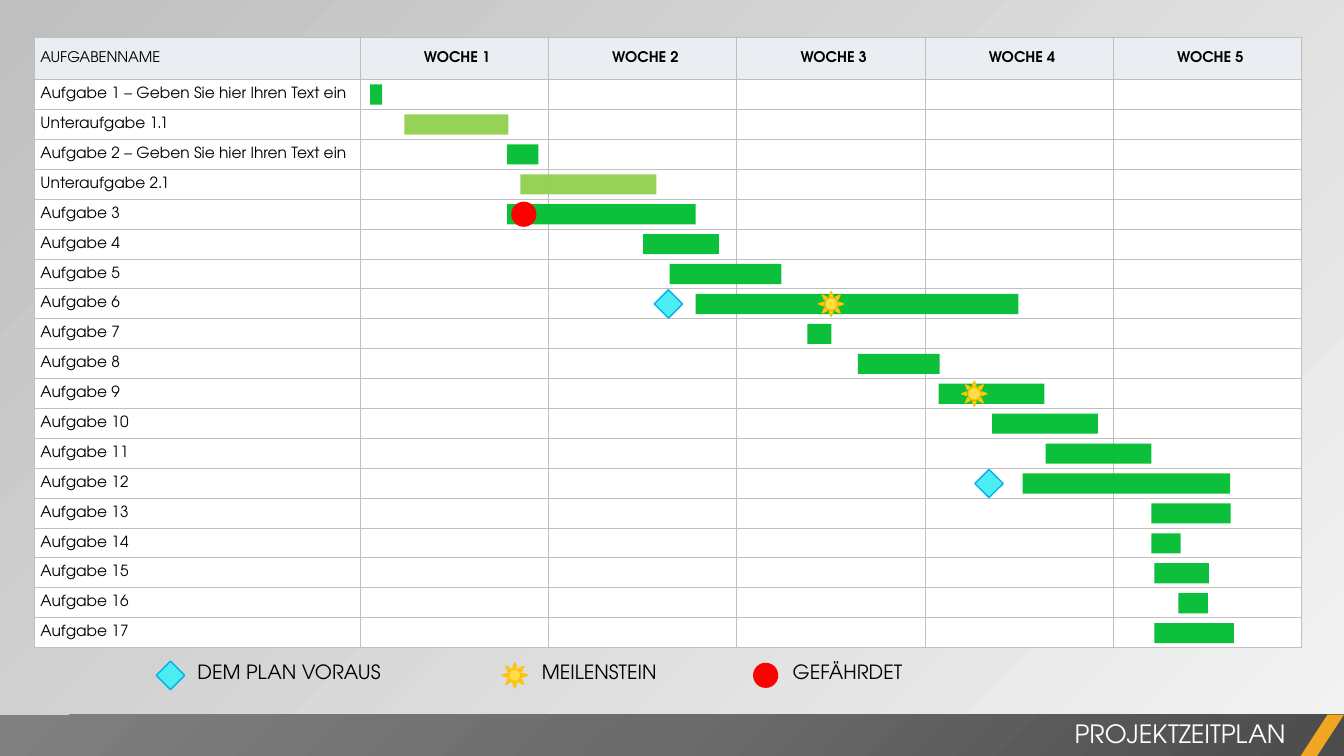
from dataclasses import dataclass

from lxml.etree import SubElement
from pptx import Presentation
from pptx.dml.color import RGBColor
from pptx.enum.shapes import MSO_SHAPE as Shape
from pptx.enum.text import MSO_ANCHOR as Anchor, PP_ALIGN as Align
from pptx.oxml import parse_xml
from pptx.oxml.ns import nsdecls, qn
from pptx.util import Inches, Pt

TITLE = "PROJEKTZEITPLAN"
HEADINGS = ["AUFGABENNAME"] + [f"WOCHE {week}" for week in range(1, 6)]

# name, first day, length in days
TASKS = [
    ("Aufgabe 1 – Geben Sie hier Ihren Text ein", 0.27, 0.32),
    ("Unteraufgabe 1.1", 1.18, 2.76),
    ("Aufgabe 2 – Geben Sie hier Ihren Text ein", 3.91, 0.83),
    ("Unteraufgabe 2.1", 4.26, 3.61),
    ("Aufgabe 3", 3.91, 5),
    ("Aufgabe 4", 7.52, 2.01),
    ("Aufgabe 5", 8.22, 2.97),
    ("Aufgabe 6", 8.91, 8.57),
    ("Aufgabe 7", 11.88, 0.64),
    ("Aufgabe 8", 13.22, 2.17),
    ("Aufgabe 9", 15.36, 2.81),
    ("Aufgabe 10", 16.78, 2.81),
    ("Aufgabe 11", 18.2, 2.81),
    ("Aufgabe 12", 17.59, 5.51),
    ("Aufgabe 13", 21.01, 2.11),
    ("Aufgabe 14", 21.01, 0.78),
    ("Aufgabe 15", 21.09, 1.45),
    ("Aufgabe 16", 21.73, 0.78),
    ("Aufgabe 17", 21.09, 2.11),
]
EVENTS = [
    ("risk", "Aufgabe 3", 4.35),
    ("milestone", "Aufgabe 6", 12.51),
    ("milestone", "Aufgabe 9", 16.31),
    ("ahead", "Aufgabe 6", 8.19),
    ("ahead", "Aufgabe 12", 16.7),
]
LEGEND = [
    ("ahead", "DEM PLAN VORAUS", -5.03, 2.04),
    ("milestone", "MEILENSTEIN", 4.11, 1.35),
    ("risk", "GEFÄHRDET", 10.77, 1.31),
]
MARKERS = {
    "ahead": (Shape.RECTANGLE, 0.2, "4CEDF0", "00B0F0"),
    "milestone": (Shape.SUN, 0.25, "FFDE4C", "FFC000"),
    "risk": (Shape.OVAL, 0.25, "FF0000", None),
}


@dataclass(frozen=True)
class Theme:
    font: str = "TeX Gyre Adventor"
    ink: str = "000000"
    paper: str = "FFFFFF"
    header: str = "EAEEF3"
    grid: str = "BFBFBF"
    task: str = "00BD32"
    subtask: str = "92D050"
    accent: str = "F0A622"
    backdrop: tuple = ((0, "F2F2F2", 40), (100, "BFBFBF", 100))
    footer: tuple = ((0, "4C4C4C", 100), (50, "6B6B6B", 100), (100, "808080", 100))
    heading_size: float = 10.5
    task_size: float = 11
    legend_size: float = 14
    title_size: float = 18


theme = Theme()
WIDTH, HEIGHT = 13.33, 7.5
LEFT, TOP, RIGHT, BOTTOM = 0.34, 0.37, 12.91, 6.43
NAME_WIDTH, HEADER_HEIGHT, BAR_HEIGHT = 3.23, 0.42, 0.2
WEEK = (RIGHT - LEFT - NAME_WIDTH) / (len(HEADINGS) - 1)
DAY = WEEK / 5
ROW = (BOTTOM - TOP - HEADER_HEIGHT) / len(TASKS)
FOOTER_TOP, LEGEND_MIDDLE = 7.09, 6.7

deck = Presentation()
deck.slide_width, deck.slide_height = Inches(WIDTH), Inches(HEIGHT)
slide = deck.slides.add_slide(deck.slide_layouts[6])


def day_x(day):
    return LEFT + NAME_WIDTH + day * DAY


def row_middle(row):
    return TOP + HEADER_HEIGHT + (row + 0.5) * ROW


def write(frame, text, size, color=theme.ink, bold=False, align=Align.LEFT):
    paragraph = frame.paragraphs[0]
    paragraph.alignment = align
    run = paragraph.add_run()
    run.text = text
    run.font.name, run.font.size, run.font.bold = theme.font, Pt(size), bold
    run.font.color.rgb = RGBColor.from_string(color)


def label(text, x, y, width, height, wrap=False, **style):
    frame = slide.shapes.add_textbox(*map(Inches, (x, y, width, height))).text_frame
    frame.word_wrap = wrap
    write(frame, text, **style)


def draw(kind, x, y, width, height, fill, line=None, alpha=100):
    shape = slide.shapes.add_shape(kind, *map(Inches, (x, y, width, height)))
    shape.shadow.inherit = False
    shape.fill.solid()
    shape.fill.fore_color.rgb = RGBColor.from_string(fill)
    if alpha < 100:
        tint = shape.fill._xPr.find(qn("a:solidFill"))[0]
        SubElement(tint, qn("a:alpha"), val=str(alpha * 1000))
    if line:
        shape.line.color.rgb = RGBColor.from_string(line)
        shape.line.width = Pt(1)
    else:
        shape.line.fill.background()
    return shape


def mark(event, day, middle):
    kind, size, fill, line = MARKERS[event]
    draw(kind, day_x(day) - size / 2, middle - size / 2, size, size, fill, line).rotation = 45


def shade(fill, stops, direction):
    fill.solid()
    solid = fill._xPr.find(qn("a:solidFill"))
    colors = "".join(
        f'<a:gs pos="{at * 1000}"><a:srgbClr val="{color}"><a:alpha val="{alpha * 1000}"/></a:srgbClr></a:gs>'
        for at, color, alpha in stops)
    solid.getparent().replace(solid, parse_xml(
        f'<a:gradFill {nsdecls("a")} rotWithShape="1"><a:gsLst>{colors}</a:gsLst>{direction}</a:gradFill>'))


def format_cell(cell, fill):
    cell.margin_left = Inches(0.06)
    cell.margin_right = cell.margin_top = cell.margin_bottom = 0
    cell.vertical_anchor = Anchor.MIDDLE
    cell.fill.solid()
    cell.fill.fore_color.rgb = RGBColor.from_string(fill)
    properties = cell._tc.get_or_add_tcPr()
    for place, side in enumerate("LRTB"):
        properties.insert(place, parse_xml(
            f'<a:ln{side} {nsdecls("a")} w="{Pt(0.5)}"><a:solidFill>'
            f'<a:srgbClr val="{theme.grid}"/></a:solidFill></a:ln{side}>'))


def build_table():
    table = slide.shapes.add_table(
        len(TASKS) + 1, len(HEADINGS),
        *map(Inches, (LEFT, TOP, RIGHT - LEFT, BOTTOM - TOP))).table
    table.first_row = table.horz_banding = False
    for index, column in enumerate(table.columns):
        column.width = Inches(WEEK if index else NAME_WIDTH)
    for index, row in enumerate(table.rows):
        row.height = Inches(ROW if index else HEADER_HEIGHT)
        for cell in row.cells:
            format_cell(cell, theme.paper if index else theme.header)
    for column, heading in enumerate(HEADINGS):
        write(table.cell(0, column).text_frame, heading, theme.heading_size,
              bold=column > 0, align=Align.CENTER if column else Align.LEFT)
    for row, (name, _, _) in enumerate(TASKS, 1):
        write(table.cell(row, 0).text_frame, name, theme.task_size)
        for column in range(1, len(HEADINGS)):
            paragraph = table.cell(row, column).text_frame.paragraphs[0]
            SubElement(paragraph._p, qn("a:endParaRPr"), sz=str(theme.task_size * 100))


shade(slide.background.fill, theme.backdrop, '<a:lin ang="13500000" scaled="0"/>')
build_table()

for row, (name, start, days) in enumerate(TASKS):
    color = theme.subtask if name.startswith("Unter") else theme.task
    draw(Shape.RECTANGLE, day_x(start), row_middle(row) - BAR_HEIGHT / 2,
         days * DAY, BAR_HEIGHT, color, alpha=95)

for event, meaning, day, width in LEGEND:
    mark(event, day, LEGEND_MIDDLE)
    label(meaning, day_x(day) + 0.17, LEGEND_MIDDLE - 0.2, width, 0.34, size=theme.legend_size)

task_names = [name for name, _, _ in TASKS]
for event, name, day in EVENTS:
    mark(event, day, row_middle(task_names.index(name)))

footer = draw(Shape.RECTANGLE, 0, FOOTER_TOP, WIDTH, HEIGHT - FOOTER_TOP, theme.ink)
shade(footer.fill, theme.footer,
      '<a:path path="circle"><a:fillToRect l="100000" t="100000"/></a:path>')
stripe = draw(Shape.PARALLELOGRAM, WIDTH - 0.43, FOOTER_TOP, 0.43, HEIGHT - FOOTER_TOP, theme.accent)
stripe.adjustments[0] = 0.65
label(TITLE, 5.25, FOOTER_TOP - 0.01, 7.6, 0.4, wrap=True,
      size=theme.title_size, color=theme.paper, align=Align.RIGHT)

deck.save("out.pptx")
